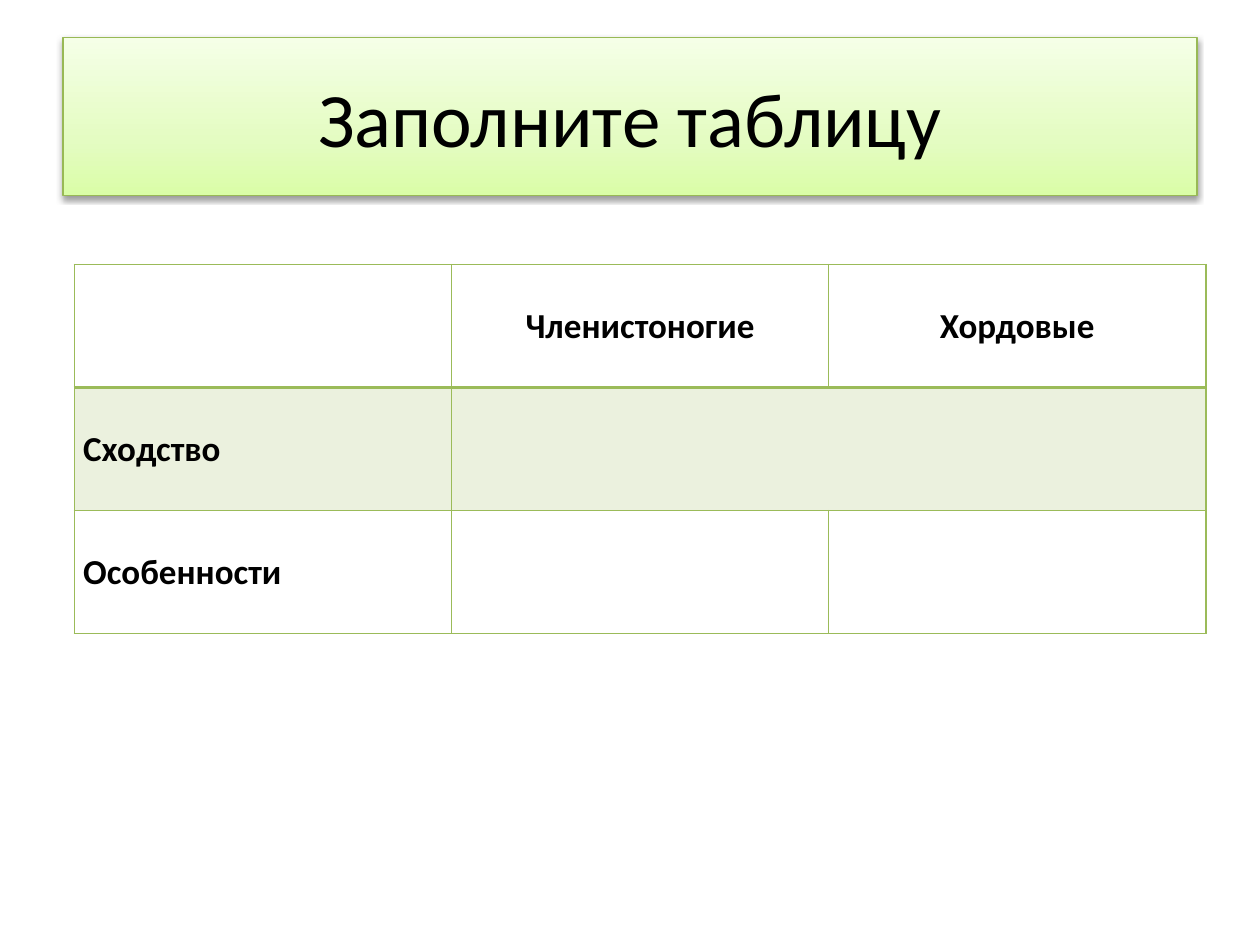
from dataclasses import dataclass

from lxml.etree import SubElement
from pptx import Presentation
from pptx.dml.color import RGBColor
from pptx.enum.text import MSO_ANCHOR, PP_ALIGN
from pptx.oxml import parse_xml
from pptx.oxml.ns import nsdecls, qn
from pptx.util import Inches, Pt


@dataclass(frozen=True)
class Theme:
    font: str = "Calibri"
    text: str = "000000"
    title_line: str = "98B955"
    title_stops: tuple = ((0, "DAFDA7"), (35, "E4FCC2"), (100, "F5FFE7"))
    border: str = "9BBB59"
    band: str = "EBF1DE"
    title_size: int = 44
    table_size: int = 20


THEME = Theme()
ROWS = (
    ("", "Членистоногие", "Хордовые"),
    ("Сходство", "", ""),
    ("Особенности", "", ""),
)


def style_paragraph(p, size, align, bold=False):
    p.alignment = align
    p.font.name = THEME.font
    p.font.size = Pt(size)
    p.font.bold = bold
    p.font.color.rgb = RGBColor.from_string(THEME.text)


def add_gradient_and_shadow(sp):
    sp.line.color.rgb = RGBColor.from_string(THEME.title_line)
    sp.line.width = Pt(0.75)
    stops = "".join(
        f'<a:gs pos="{pos * 1000}"><a:srgbClr val="{color}"/></a:gs>'
        for pos, color in THEME.title_stops
    )
    gradient = parse_xml(
        f'<a:gradFill {nsdecls("a")} rotWithShape="1"><a:gsLst>{stops}</a:gsLst>'
        '<a:lin ang="16200000" scaled="0"/></a:gradFill>'
    )
    shadow = parse_xml(
        f'<a:effectLst {nsdecls("a")}>'
        f'<a:outerShdw blurRad="{Pt(3.1)}" dist="{Pt(1.6)}" dir="5400000" rotWithShape="0">'
        '<a:srgbClr val="000000"><a:alpha val="38000"/></a:srgbClr>'
        '</a:outerShdw></a:effectLst>'
    )
    line = sp.line._get_or_add_ln()
    line.addprevious(parse_xml(f'<a:prstGeom {nsdecls("a")} prst="rect"><a:avLst/></a:prstGeom>'))
    line.addprevious(gradient)
    line.addnext(shadow)


def place_title(s, left, top, width, height):
    sp = s.shapes.title
    sp.left, sp.top, sp.width, sp.height = left, top, width, height
    add_gradient_and_shadow(sp)
    tf = sp.text_frame
    tf.text = "Заполните таблицу"
    tf.vertical_anchor = MSO_ANCHOR.MIDDLE
    style_paragraph(tf.paragraphs[0], THEME.title_size, PP_ALIGN.CENTER)


def set_borders(cell, top, bottom):
    properties = cell._tc.get_or_add_tcPr()
    for side, width in (("L", 1), ("R", 1), ("T", top), ("B", bottom)):
        line = SubElement(properties, qn(f"a:ln{side}"), w=str(Pt(width)))
        fill = SubElement(line, qn("a:solidFill"))
        SubElement(fill, qn("a:srgbClr"), val=THEME.border)


def fill_cell(cell, text, row, col):
    set_borders(cell, top=2 if row == 1 else 1, bottom=2 if row == 0 else 1)
    if row == 1:
        cell.fill.solid()
        cell.fill.fore_color.rgb = RGBColor.from_string(THEME.band)
    else:
        cell.fill.background()
    cell.vertical_anchor = MSO_ANCHOR.MIDDLE
    cell.margin_left = cell.margin_right = Inches(0.07)
    cell.margin_top = cell.margin_bottom = 0
    cell.text = text
    align = PP_ALIGN.JUSTIFY if col == 0 else PP_ALIGN.CENTER
    style_paragraph(cell.text_frame.paragraphs[0], THEME.table_size, align, bold=True)


def place_table(s, left, top, width, height):
    frame = s.shapes.add_table(len(ROWS), len(ROWS[0]), left, top, width, height)
    table = frame.table
    table.first_row = table.horz_banding = False
    for row, texts in enumerate(ROWS):
        for col, text in enumerate(texts):
            fill_cell(table.cell(row, col), text, row, col)
    table.cell(1, 1).merge(table.cell(1, 2))


def main():
    prs = Presentation()
    prs.slide_width, prs.slide_height = Inches(10), Inches(7.5)
    s = prs.slides.add_slide(prs.slide_layouts.get_by_name("Title Only"))
    place_title(s, Inches(0.5), Inches(0.3), Inches(9), Inches(1.25))
    place_table(s, Inches(0.59), Inches(2.1), Inches(8.98), Inches(2.93))
    prs.save("out.pptx")


if __name__ == "__main__":
    main()
